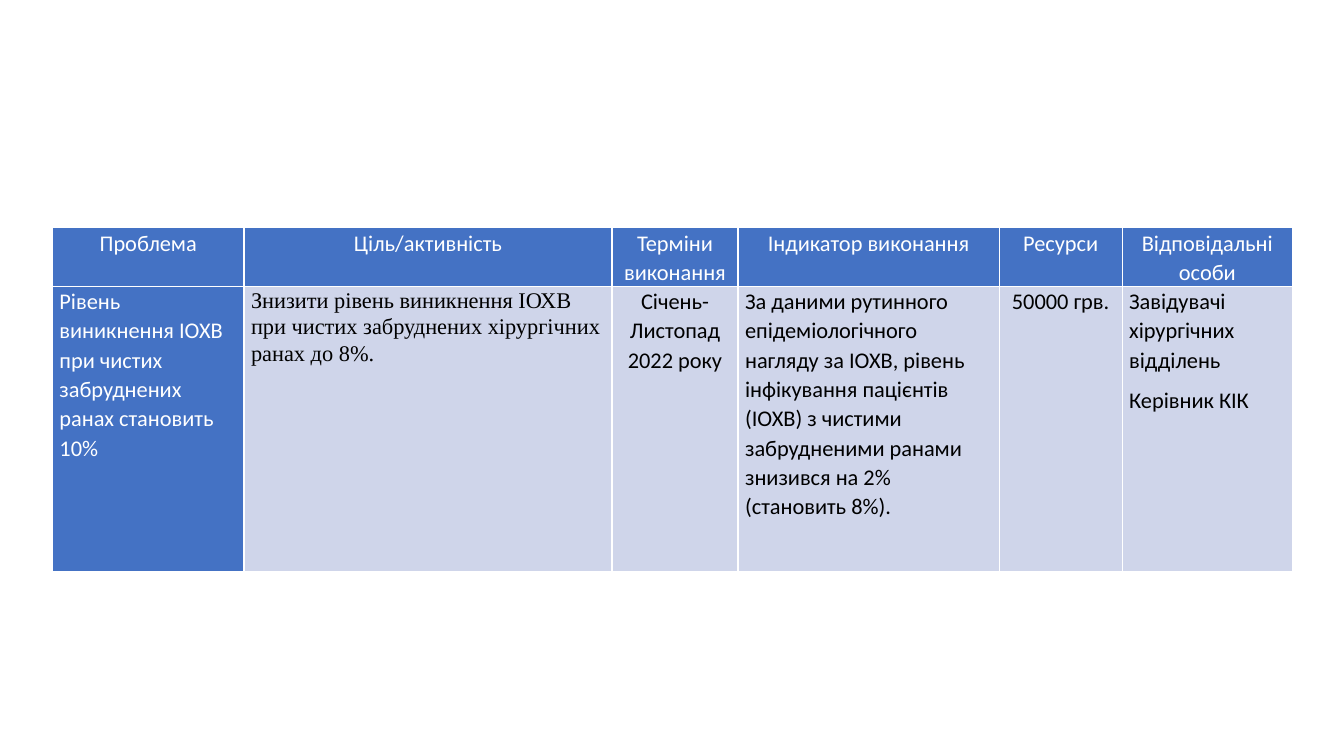
from lxml.etree import SubElement
from pptx import Presentation
from pptx.dml.color import RGBColor
from pptx.enum.text import PP_ALIGN
from pptx.oxml.ns import qn
from pptx.util import Inches, Pt

BLUE = RGBColor(0x44, 0x72, 0xC4)
PALE = RGBColor(0xCF, 0xD5, 0xEA)
WHITE = RGBColor(0xFF, 0xFF, 0xFF)
BLACK = RGBColor(0, 0, 0)

LEFT, CENTER, JUSTIFY = PP_ALIGN.LEFT, PP_ALIGN.CENTER, PP_ALIGN.JUSTIFY
SANS, SERIF = "Calibri", "Times New Roman"

COLUMN_WIDTHS = [1.9, 3.65, 1.25, 2.59, 1.22, 1.69]
ROW_HEIGHTS = [0.56, 2.83]
HEADINGS = ["Проблема", "Ціль/активність", "Терміни виконання",
            "Індикатор виконання", "Ресурси", "Відповідальні особи"]
PLAN = [
    ("Рівень виникнення ІОХВ при чистих забруднених ранах становить 10%",
     LEFT, SANS, WHITE, BLUE),
    ("Знизити рівень виникнення ІОХВ при чистих забруднених хірургічних ранах до 8%.",
     LEFT, SERIF, BLACK, PALE),
    ("Січень-Листопад 2022 року", CENTER, SANS, BLACK, PALE),
    ("За даними рутинного епідеміологічного нагляду за ІОХВ, рівень інфікування "
     "пацієнтів (ІОХВ) з чистими забрудненими ранами знизився на 2% (становить 8%).",
     LEFT, SANS, BLACK, PALE),
    ("50000 грв.", CENTER, SANS, BLACK, PALE),
    ("Завідувачі хірургічних відділень\nКерівник КІК", JUSTIFY, SANS, BLACK, PALE),
]


class PlanSlide:
    """Holds the table style and the slide being built."""

    cell_format = {"margin_left": Inches(0.07), "margin_right": Inches(0.07),
                   "margin_top": 0, "margin_bottom": 0}
    paragraph_format = {"line_spacing": 1.07, "space_after": Pt(8)}
    font_format = {"size": Pt(16), "bold": False}

    def __init__(self, presentation):
        self.slide = presentation.slides.add_slide(presentation.slide_layouts[6])

    def apply(self, target, values):
        for attribute, value in values.items():
            setattr(target, attribute, value)

    def borders(self, cell):
        properties = cell._tc.get_or_add_tcPr()
        for side in ("lnL", "lnR", "lnT", "lnB"):
            line = SubElement(properties, qn(f"a:{side}"), w=str(Pt(1)))
            fill = SubElement(line, qn("a:solidFill"))
            SubElement(fill, qn("a:srgbClr"), val=str(WHITE))

    def cell(self, cell, wording, alignment, typeface, ink, background):
        self.apply(cell, self.cell_format)
        self.borders(cell)
        cell.fill.solid()
        cell.fill.fore_color.rgb = background
        cell.text = wording
        for paragraph in cell.text_frame.paragraphs:
            self.apply(paragraph, {**self.paragraph_format, "alignment": alignment})
            for run in paragraph.runs:
                self.apply(run.font, {**self.font_format, "name": typeface})
                run.font.color.rgb = ink

    def table(self, left, top, widths, heights, rows):
        table = self.slide.shapes.add_table(
            len(heights), len(widths), Inches(left), Inches(top),
            Inches(sum(widths)), Inches(sum(heights))).table
        for column, width in zip(table.columns, widths):
            column.width = Inches(width)
        for row, height, contents in zip(table.rows, heights, rows):
            row.height = Inches(height)
            for cell, content in zip(row.cells, contents):
                self.cell(cell, *content)


def main():
    presentation = Presentation()
    presentation.slide_width = Inches(13.33)
    presentation.slide_height = Inches(7.5)
    header = [(heading, CENTER, SANS, WHITE, BLUE) for heading in HEADINGS]
    PlanSlide(presentation).table(0.52, 2.26, COLUMN_WIDTHS, ROW_HEIGHTS, [header, PLAN])
    presentation.save("out.pptx")


if __name__ == "__main__":
    main()
